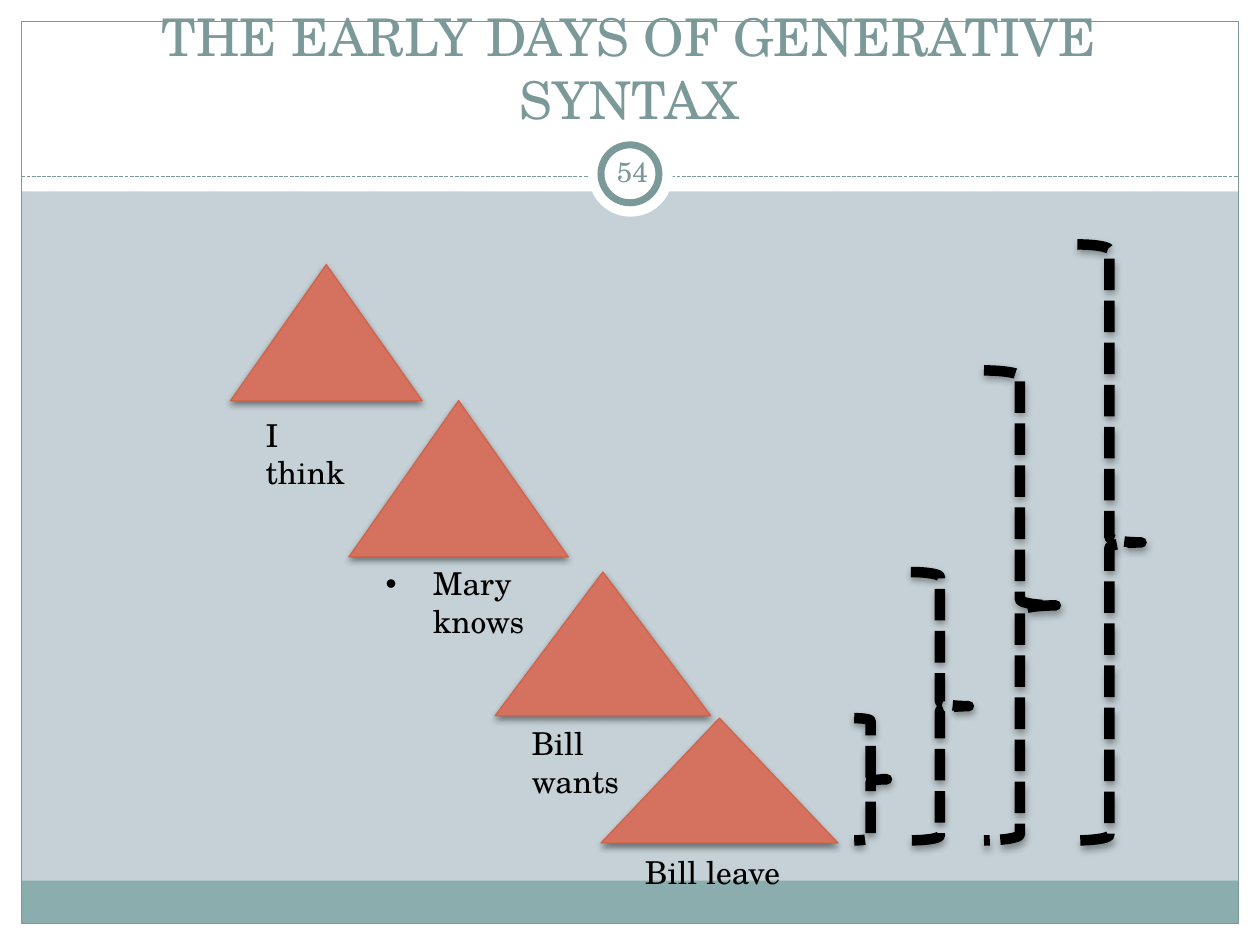
import lxml.etree
import pptx
import pptx.dml.color
import pptx.enum.dml
import pptx.enum.shapes
import pptx.enum.text
import pptx.oxml.ns
import pptx.util

Inches = pptx.util.Inches
Pt = pptx.util.Pt
qn = pptx.oxml.ns.qn
SHAPE = pptx.enum.shapes.MSO_SHAPE
ALIGN = pptx.enum.text.PP_ALIGN
ANCHOR = pptx.enum.text.MSO_ANCHOR
SYS_DASH = pptx.enum.dml.MSO_LINE.SQUARE_DOT

FONT = "TeX Gyre Schola"
COLORS = {
    "background": "C5D1D7",
    "paper": "FFFFFF",
    "band": "8CADAE",
    "accent": "7C999A",
    "triangle": "D4725F",
    "triangle_edge": "D16349",
    "ink": "000000",
}


def rgb(name):
    return pptx.dml.color.RGBColor.from_string(COLORS[name])


def style_line(line, color, width, dash=None):
    line.color.rgb = rgb(color)
    line.width = Pt(width)
    if dash:
        line.dash_style = dash


def add_shape(slide, kind, box, fill=None, edge=None, width=0.75, dash=None):
    shape = slide.shapes.add_shape(kind, *map(Inches, box))
    shape.shadow.inherit = False
    if fill:
        shape.fill.solid()
        shape.fill.fore_color.rgb = rgb(fill)
    else:
        shape.fill.background()
    if edge:
        style_line(shape.line, edge, width, dash)
    else:
        shape.line.fill.background()
    return shape


def drop_shadow(shape, opacity):
    effects = shape._element.spPr.find(qn("a:effectLst"))
    shadow = lxml.etree.SubElement(
        effects, qn("a:outerShdw"), blurRad=str(Pt(4)), dist=str(Pt(2)),
        dir="5400000", rotWithShape="0")
    tint = lxml.etree.SubElement(shadow, qn("a:srgbClr"), val=COLORS["ink"])
    lxml.etree.SubElement(tint, qn("a:alpha"), val=str(opacity * 1000))


def place(shape, box):
    shape.left, shape.top, shape.width, shape.height = map(Inches, box)


def write(shape, text, size, color="ink", align=ALIGN.LEFT, anchor=ANCHOR.TOP):
    frame = shape.text_frame
    frame.text = text
    frame.word_wrap = True
    frame.auto_size = pptx.enum.text.MSO_AUTO_SIZE.NONE
    frame.vertical_anchor = anchor
    paragraph = frame.paragraphs[0]
    paragraph.alignment = align
    paragraph.space_before = Pt(0)
    font = paragraph.runs[0].font
    font.name = FONT
    font.size = Pt(size)
    font.color.rgb = rgb(color)


def add_frame(slide, box):
    left, top, width, height = box
    margin = 0.17
    right, bottom = left + width, top + height
    for edge in [
        (left, bottom - margin, width, margin),
        (left, top, width, 1.52),
        (left, top, margin, height),
        (right - margin, top, margin, height),
    ]:
        add_shape(slide, SHAPE.RECTANGLE, edge, "paper")
    inner_width = width - 2 * margin
    add_shape(slide, SHAPE.RECTANGLE,
              (left + margin, bottom - 0.51, inner_width, 0.34), "band")
    add_shape(slide, SHAPE.RECTANGLE,
              (left + margin, top + margin, inner_width, height - 2 * margin),
              edge="accent")
    rule = slide.shapes.add_connector(
        pptx.enum.shapes.MSO_CONNECTOR.STRAIGHT,
        Inches(left + margin), Inches(top + 1.4),
        Inches(right - margin), Inches(top + 1.4))
    style_line(rule.line, "accent", 0.75, SYS_DASH)
    lxml.etree.SubElement(rule._element.spPr, qn("a:effectLst"))


def add_page_number(slide, box, number):
    left, top, size, _ = box
    add_shape(slide, SHAPE.OVAL, box, "paper")
    add_shape(slide, SHAPE.OVAL, (left + 0.1, top + 0.1, size - 0.21, size - 0.21),
              "paper", "accent", 4)
    label = slide.shapes.add_textbox(
        *map(Inches, (left + 0.1, top + 0.07, 0.5, 0.48)))
    frame = label.text_frame
    frame.margin_left = frame.margin_right = Inches(0.05)
    write(label, number, 16, "accent", ALIGN.CENTER, ANCHOR.MIDDLE)


def add_title(slide, box, text):
    title = slide.shapes.title
    slide.shapes._spTree.append(title._element)
    place(title, box)
    write(title, text, 29.7, "accent", ALIGN.CENTER, ANCHOR.BOTTOM)


def add_body(slide, box, text):
    body = slide.placeholders[1]
    slide.shapes._spTree.append(body._element)
    place(body, box)
    properties = body.text_frame.paragraphs[0]._p.get_or_add_pPr()
    properties.set("marL", "0")
    properties.set("indent", "0")
    lxml.etree.SubElement(properties, qn("a:buNone"))
    write(body, text, 18)


def add_clauses(slide, triangles, labels):
    for box in triangles:
        clause = add_shape(slide, SHAPE.ISOSCELES_TRIANGLE, box,
                           "triangle", "triangle_edge")
        drop_shadow(clause, 45)
    for text, box in labels:
        write(slide.shapes.add_textbox(*map(Inches, box)), text, 18)


def add_cycles(slide, bottom, braces):
    for left, top, width in braces:
        brace = add_shape(slide, SHAPE.RIGHT_BRACE,
                          (left, top, width, bottom - top),
                          edge="ink", width=6, dash=SYS_DASH)
        drop_shadow(brace, 35)


def main():
    deck = pptx.Presentation()
    deck.slide_width, deck.slide_height = Inches(10), Inches(7.5)
    slide = deck.slides.add_slide(deck.slide_layouts[1])
    slide.background.fill.solid()
    slide.background.fill.fore_color.rgb = rgb("background")

    add_frame(slide, (0, 0, 10, 7.5))
    add_page_number(slide, (4.67, 1.05, 0.67, 0.67), "54")
    add_title(slide, (0.33, 0.25, 9.33, 0.83),
              "THE EARLY DAYS OF GENERATIVE SYNTAX")
    add_body(slide, (2.96, 4.43, 1.75, 0.4), "Mary knows")
    add_clauses(
        slide,
        [(1.83, 2.1, 1.52, 1.08), (2.77, 3.18, 1.74, 1.24),
         (3.93, 4.54, 1.71, 1.14), (4.77, 5.7, 1.88, 0.99)],
        [("Bill leave", (5.02, 6.72, 2.21, 0.4)),
         ("Bill wants", (4.12, 5.7, 0.95, 0.7)),
         ("I think", (2.01, 3.25, 0.9, 0.7))])
    add_cycles(slide, 6.67, [(6.78, 5.7, 0.26), (7.23, 4.54, 0.46),
                             (7.81, 2.94, 0.57), (8.55, 1.94, 0.51)])
    deck.save("out.pptx")


if __name__ == "__main__":
    main()
